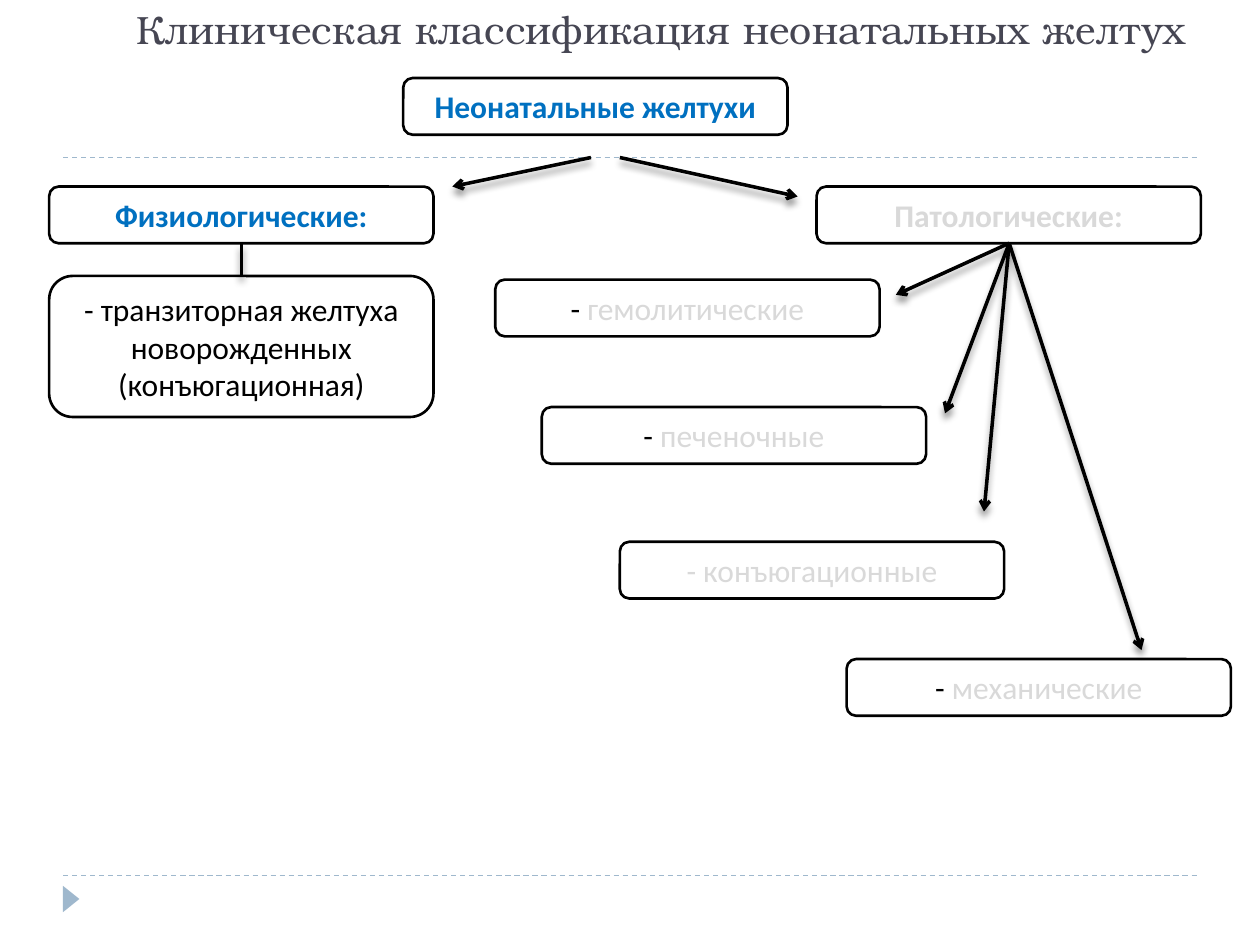
import pptx
import pptx.dml.color
import pptx.enum.dml
import pptx.enum.shapes
import pptx.enum.text
import pptx.oxml
import pptx.oxml.ns
import pptx.util

Pt = pptx.util.Pt
COLORS = {
    "title": "464653",
    "accent": "9FB8CD",
    "heading": "0070C0",
    "muted": "D9D9D9",
    "black": "000000",
    "white": "FFFFFF",
}
BOX_WIDTH, BOX_HEIGHT = 219.6, 32.4


def color(name):
    return pptx.dml.color.RGBColor.from_string(COLORS[name])


def add_line(start, end, line_color, width, effects=""):
    """Add a straight connector with the given XML inside its effect list."""
    line = slide.shapes.add_connector(
        pptx.enum.shapes.MSO_CONNECTOR.STRAIGHT, *(Pt(value) for value in start + end))
    line.line.color.rgb = color(line_color)
    line.line.width = Pt(width)
    namespace = pptx.oxml.ns.nsdecls("a")
    line._element.spPr.append(
        pptx.oxml.parse_xml(f"<a:effectLst {namespace}>{effects}</a:effectLst>"))
    return line


presentation = pptx.Presentation()
presentation.slide_width, presentation.slide_height = Pt(720), Pt(540)
slide = presentation.slides.add_slide(presentation.slide_layouts[5])

# Title
title = slide.shapes.title
title.left, title.top, title.width, title.height = Pt(36), Pt(0), Pt(684), Pt(33.8)
frame = title.text_frame
frame.auto_size = pptx.enum.text.MSO_AUTO_SIZE.NONE
frame.vertical_anchor = pptx.enum.text.MSO_ANCHOR.BOTTOM
paragraph = frame.paragraphs[0]
paragraph.alignment = pptx.enum.text.PP_ALIGN.CENTER
run = paragraph.add_run()
run.text = "Клиническая классификация неонатальных желтух"
run.font.name = "TeX Gyre Bonum"
run.font.size = Pt(22.5)
run.font.color.rgb = color("title")

# Dashed rules and corner marker
for y in (500.4, 90):
    rule = add_line((36, y), (684, y), "accent", 0.75)
    rule.line.dash_style = pptx.enum.dml.MSO_LINE.DASH

marker = slide.shapes.add_shape(
    pptx.enum.shapes.MSO_SHAPE.ISOSCELES_TRIANGLE, Pt(33.1), Pt(509), Pt(15.1), Pt(9.4))
marker.rotation = 90
marker.shadow.inherit = False
marker.fill.solid()
marker.fill.fore_color.rgb = color("accent")
marker.line.fill.background()

# Classification boxes: left, top, height, bold, runs
boxes = [
    (230.4, 44.6, BOX_HEIGHT, True, [("Неонатальные желтухи", "heading")]),
    (28.1, 106.6, BOX_HEIGHT, True, [("Физиологические:", "heading")]),
    (466.6, 106.6, BOX_HEIGHT, True, [("Патологические:", "muted")]),
    (28.1, 157.7, 80.6, False,
     [("- транзиторная желтуха новорожденных (конъюгационная)", "black")]),
    (354.2, 309.6, BOX_HEIGHT, False, [("- конъюгационные", "muted")]),
    (283, 159.8, BOX_HEIGHT, False, [("- ", "black"), ("гемолитические", "muted")]),
    (309.6, 232.6, BOX_HEIGHT, False, [("- ", "black"), ("печеночные", "muted")]),
    (483.8, 376.6, BOX_HEIGHT, False, [("- ", "black"), ("механические", "muted")]),
]
for left, top, height, bold, runs in boxes:
    box = slide.shapes.add_shape(
        pptx.enum.shapes.MSO_SHAPE.ROUNDED_RECTANGLE,
        Pt(left), Pt(top), Pt(BOX_WIDTH), Pt(height))
    box.shadow.inherit = False
    box.fill.solid()
    box.fill.fore_color.rgb = color("white")
    box.line.color.rgb = color("black")
    box.line.width = Pt(1.5)
    frame = box.text_frame
    frame.word_wrap = True
    frame.auto_size = pptx.enum.text.MSO_AUTO_SIZE.SHAPE_TO_FIT_TEXT
    paragraph = frame.paragraphs[0]
    paragraph.alignment = pptx.enum.text.PP_ALIGN.CENTER
    for text, text_color in runs:
        run = paragraph.add_run()
        run.text = text
        run.font.name = "Calibri"
        run.font.size = Pt(18)
        run.font.bold = bold
        run.font.color.rgb = color(text_color)

# Links between boxes: start, end, arrowhead
SHADOW = (
    f'<a:outerShdw blurRad="{Pt(4)}" dist="{Pt(3.4)}" dir="5400000" rotWithShape="0">'
    f'<a:srgbClr val="{COLORS["black"]}"><a:alpha val="40000"/></a:srgbClr></a:outerShdw>'
)
pathological = (576.7, 139)
links = [
    ((337.7, 90), (258.5, 106.6), True),
    ((354.2, 90), (455.8, 112.3), True),
    ((137.9, 139), (137.9, 157.7), False),
    (pathological, (511.9, 168.5), True),
    (pathological, (540, 236.2), True),
    (pathological, (562.3, 292.3), True),
    (pathological, (652.3, 371.5), True),
]
for start, end, has_arrow in links:
    link = add_line(start, end, "black", 2, SHADOW)
    if has_arrow:
        link.line._get_or_add_ln().append(pptx.oxml.parse_xml(
            f'<a:tailEnd {pptx.oxml.ns.nsdecls("a")} type="arrow"/>'))

presentation.save("out.pptx")
